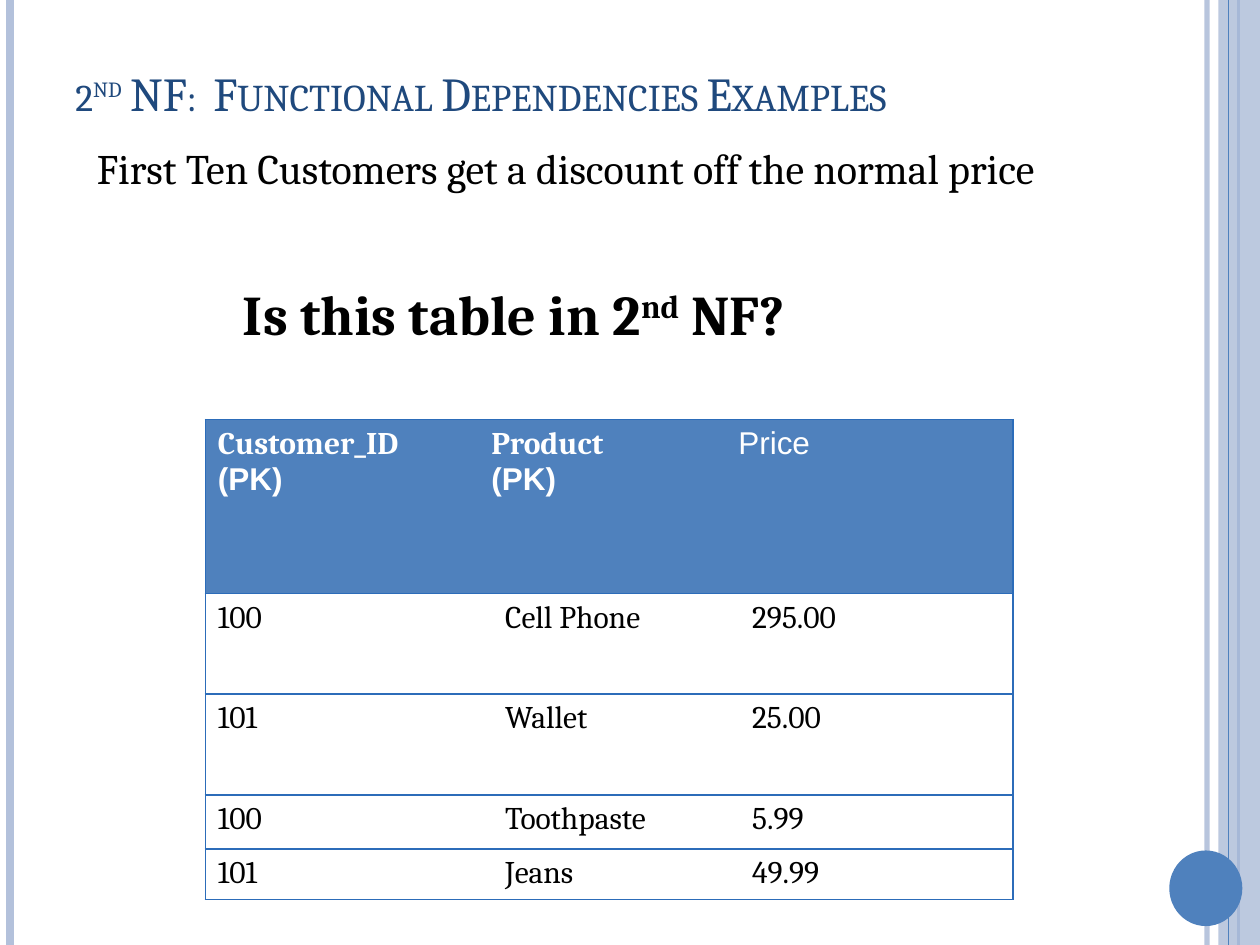
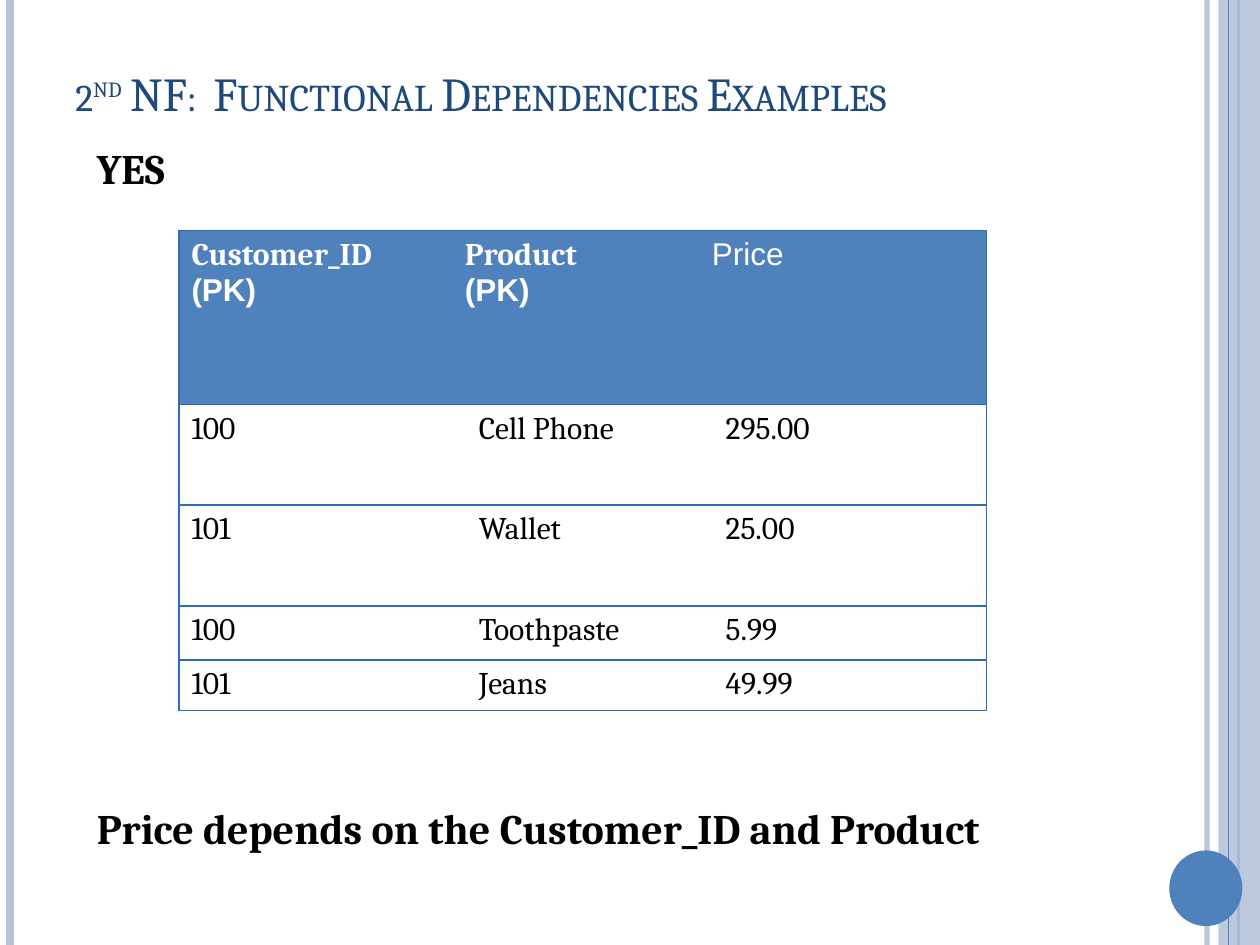
import pptx
import pptx.dml.color
import pptx.enum.shapes
import pptx.enum.text
import pptx.oxml.ns
import pptx.util
from lxml import etree
from pptx.util import Inches

SERIF, SANS = "Cambria", "Arial"
BLACK, WHITE = "000000", "FFFFFF"
BLUE, PALE, NAVY, BORDER = "4F81BD", "B3C1DB", "1F497D", "2C6CB9"
qn = pptx.oxml.ns.qn


def rgb(value):
    return pptx.dml.color.RGBColor.from_string(value)


def add_run(p, text, size, color=BLACK, bold=False, font=SERIF, **attrs):
    r = p.add_run()
    r.text = text
    r.font.size = pptx.util.Pt(size)
    r.font.name = font
    r.font.bold = bold
    r.font.color.rgb = rgb(color)
    for name, value in attrs.items():
        r.font._element.set(name, value)


prs = pptx.Presentation()
prs.slide_width, prs.slide_height = Inches(10), Inches(7.5)

# Shared frame, back to front: x, width in points, colour, opacity in percent
band_lines = [(9.58, 3, PALE, 93), (0.08, 4.5, PALE, 100),
              (9.83, 1.5, BLUE, 100), (9.75, 0.75, BLUE, 100)]
RECT = pptx.enum.shapes.MSO_SHAPE.RECTANGLE
OVAL = pptx.enum.shapes.MSO_SHAPE.OVAL

# Price table, the same on both slides
col_widths = [2.17, 1.96, 2.28]
row_heights = [1.38, 0.8, 0.8, 0.43, 0.39]
header = [[("Customer_ID", SERIF, True), ("(PK)", SANS, True)],
          [("Product", SERIF, True), ("(PK)", SANS, True)],
          [("Price", SANS, False)]]
records = [("100", "Cell Phone", "295.00"),
           ("101", "Wallet", "25.00"),
           ("100", "Toothpaste", "5.99"),
           ("101", "Jeans", "49.99")]
rows = [header] + [[[(value, SERIF, False)] for value in record] for record in records]

# What differs: table position and texts as (left, top, width, height, wrap, size, bold, parts)
slides = [
    ((1.63, 3.33), [
        (0.67, 1.08, 8.67, 1.08, True, 24, False,
         ["First Ten Customers get a discount off the normal price"]),
        (1.83, 2.17, 5.39, 0.64, False, 32, True, ["Is this table in 2", "nd", " NF?"])]),
    ((1.42, 1.83), [
        (0.67, 1.08, 1.17, 0.58, True, 24, True, ["YES"]),
        (0.67, 6.32, 8.33, 0.93, True, 24, True,
         ["Price depends on the Customer_ID and Product"])]),
]

for (table_left, table_top), texts in slides:
    s = prs.slides.add_slide(prs.slide_layouts[6])

    # Side bands and circle
    for i, (x, width, color, opacity) in enumerate(band_lines):
        if i == 3:
            band = s.shapes.add_shape(RECT, Inches(9.67), 0, Inches(0.33), Inches(7.5))
        line = s.shapes.add_connector(pptx.enum.shapes.MSO_CONNECTOR.STRAIGHT,
                                      Inches(x), 0, Inches(x), Inches(7.5))
        line.line.width = pptx.util.Pt(width)
        line.line.color.rgb = rgb(color)
        sp_pr = line._element.spPr
        etree.SubElement(sp_pr, qn("a:effectLst"))
        if opacity < 100:
            etree.SubElement(sp_pr.find(".//" + qn("a:srgbClr")), qn("a:alpha"),
                             val=str(opacity * 1000))
    circle = s.shapes.add_shape(OVAL, Inches(9.28), Inches(6.75), Inches(0.58), Inches(0.6))
    for sp, color in ((band, PALE), (circle, BLUE)):
        sp.shadow.inherit = False
        sp.fill.solid()
        sp.fill.fore_color.rgb = rgb(color)
        sp.line.fill.background()
    etree.SubElement(band._element.spPr.find(".//" + qn("a:srgbClr")), qn("a:alpha"),
                     val="87000")

    # Title
    tf = s.shapes.add_textbox(Inches(0.5), Inches(0.3), Inches(8.67), Inches(0.87)).text_frame
    tf.word_wrap = True
    tf.vertical_anchor = pptx.enum.text.MSO_ANCHOR.MIDDLE
    for text, baseline in (("2", "0"), ("nd", "30000"),
                           (" NF:  Functional Dependencies Examples", "0")):
        add_run(tf.paragraphs[0], text, 27, NAVY, cap="small", baseline=baseline)

    # Statements
    for left, top, width, height, wrap, size, bold, parts in texts:
        tf = s.shapes.add_textbox(Inches(left), Inches(top),
                                  Inches(width), Inches(height)).text_frame
        tf.word_wrap = wrap
        p = tf.paragraphs[0]
        if wrap:
            p.space_before = pptx.util.Pt(6)
        for part in parts:
            add_run(p, part, size, bold=bold, baseline="30000" if part == "nd" else "0")

    # Table
    table = s.shapes.add_table(len(rows), len(col_widths), Inches(table_left), Inches(table_top),
                               Inches(sum(col_widths)), Inches(sum(row_heights))).table
    table.first_row = table.horz_banding = False
    for col, width in zip(table.columns, col_widths):
        col.width = Inches(width)
    for row, height in zip(table.rows, row_heights):
        row.height = Inches(height)
    for i, row in enumerate(rows):
        for j, lines in enumerate(row):
            cell = table.cell(i, j)
            if i == 0:
                cell.fill.solid()
                cell.fill.fore_color.rgb = rgb(BLUE)
            else:
                cell.fill.background()
                if j > 0:
                    cell.margin_left = Inches(0.21)
            for k, (text, font, bold) in enumerate(lines):
                p = cell.text_frame.paragraphs[0] if k == 0 else cell.text_frame.add_paragraph()
                add_run(p, text, 18, WHITE if i == 0 else BLACK, bold, font)

            # Rules between rows and around the outside, none between columns
            sides = [("a:lnL", j == 0), ("a:lnR", j == len(row) - 1),
                     ("a:lnT", True), ("a:lnB", True)]
            for k, (side, drawn) in enumerate(sides):
                ln = etree.Element(qn(side), w="12700")
                if drawn:
                    fill = etree.SubElement(ln, qn("a:solidFill"))
                    etree.SubElement(fill, qn("a:srgbClr"), val=BORDER)
                else:
                    etree.SubElement(ln, qn("a:noFill"))
                cell._tc.get_or_add_tcPr().insert(k, ln)

prs.save("out.pptx")
